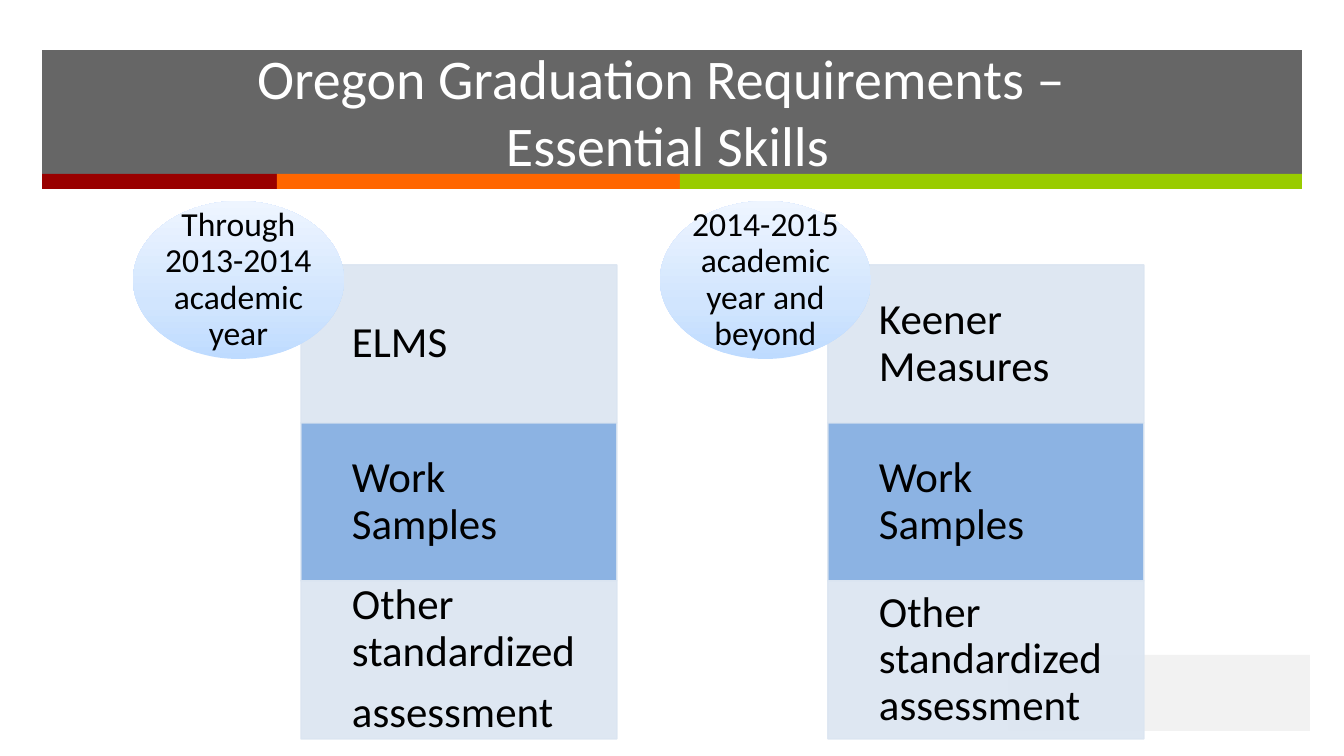
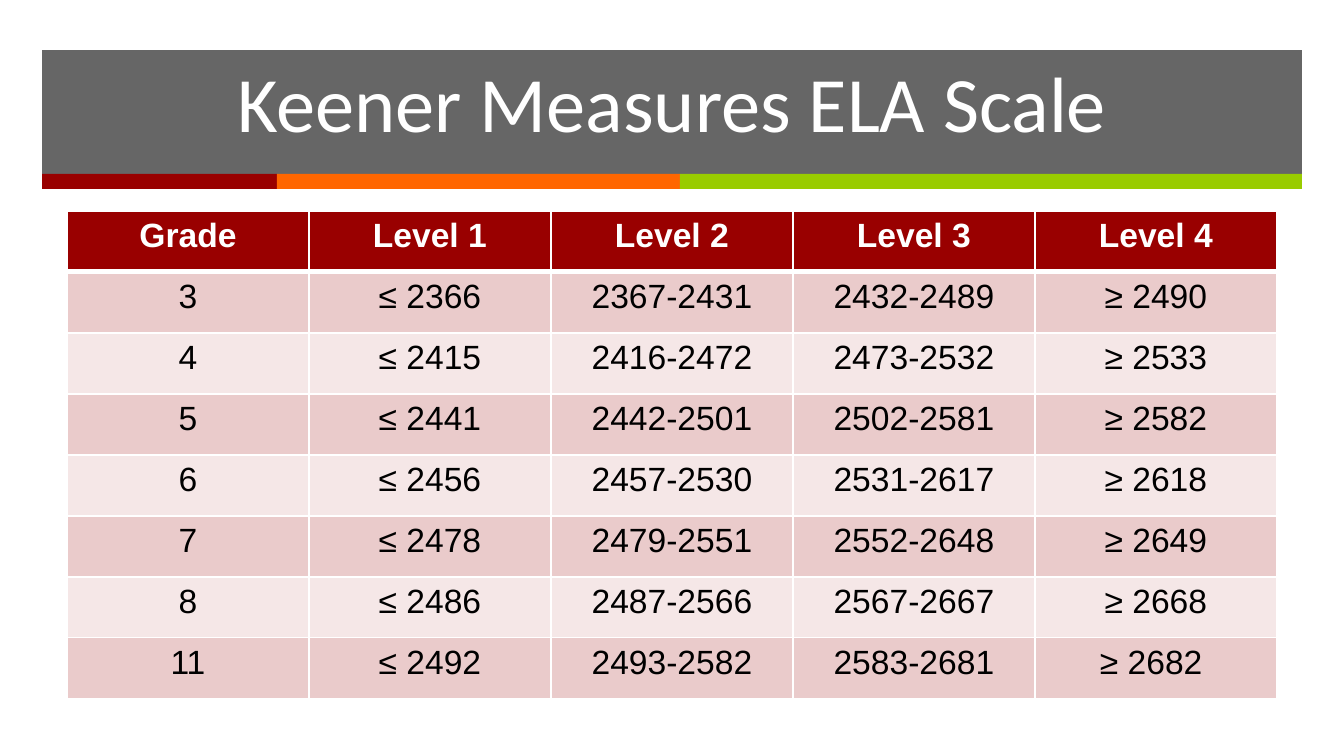
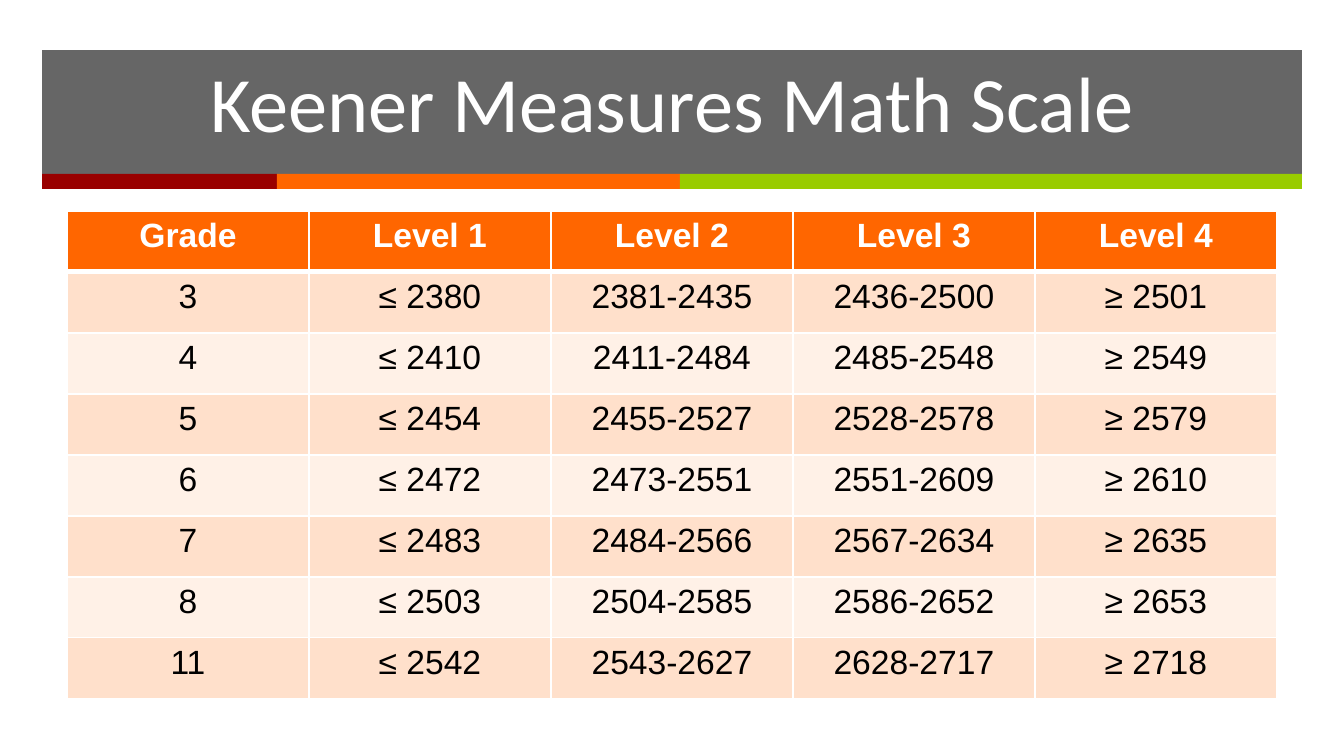
from lxml.etree import SubElement
from pptx import Presentation
from pptx.dml.color import RGBColor
from pptx.enum.shapes import MSO_SHAPE as Shape
from pptx.enum.text import MSO_ANCHOR as Anchor, MSO_AUTO_SIZE as AutoSize, PP_ALIGN as Align
from pptx.oxml.ns import qn
from pptx.util import Pt

EMU_PER_PX = 914400 / 134.4
TITLE_ONLY = 5

# Shared colours
WHITE, BLACK, GRAY = "FFFFFF", "000000", "262626"
RED, ORANGE, GREEN = "990000", "FF6600", "99CC00"
PALE_BLUE, MID_BLUE, FOOTER_GRAY = "DBE5F1", "8CB3E3", "F2F2F2"
OVAL_STOPS = [(0, "BEDBFF"), (35, "D1E5FE"), (100, "EEF5FF")]


def px(*lengths):
    return [round(length * EMU_PER_PX) for length in lengths]


def color(hex_string):
    return RGBColor.from_string(hex_string)


def set_alpha(parent, percent):
    for node in parent.iter(qn("a:srgbClr")):
        SubElement(node, qn("a:alpha"), val=str(percent * 1000))


def style_text(paragraph, size, hex_string, font="Calibri", bold=False, align=Align.CENTER):
    paragraph.alignment = align
    for run in paragraph.runs:
        run.font.name, run.font.size, run.font.bold = font, Pt(size), bold
        run.font.color.rgb = color(hex_string)


class Deck:
    """Holds the shared style and the current slide."""

    def __init__(self):
        self.presentation = Presentation()
        self.presentation.slide_width, self.presentation.slide_height = px(1344, 756)
        self.layout = self.presentation.slide_layouts[TITLE_ONLY]
        self.slide = None

    def add_slide(self, title, box=(67, 59, 1210, 84), size=42):
        is_first = self.slide is None
        self.slide = self.presentation.slides.add_slide(self.layout)
        if is_first:
            self.add_layout_bands()
        shape = self.slide.shapes.title
        shape.left, shape.top, shape.width, shape.height = px(*box)
        text_frame = shape.text_frame
        text_frame.text = title
        text_frame.auto_size = AutoSize.NONE
        text_frame.vertical_anchor = Anchor.MIDDLE
        style_text(text_frame.paragraphs[0], size, WHITE)

    def add_layout_bands(self):
        """Draw the title band and its stripes, then move them to the layout."""
        bands = [self.add_block((42, 50, 1260, 124), GRAY, alpha=70)]
        left = 42
        for width, fill in ((235, RED), (403, ORANGE), (622, GREEN)):
            bands.append(self.add_block((left, 174, width, 15), fill))
            left += width
        for position, band in enumerate(bands, start=2):
            self.layout.shapes.element.insert(position, band.element)

    def add_block(self, box, fill, alpha=None, line=None, line_alpha=89):
        shape = self.slide.shapes.add_shape(Shape.RECTANGLE, *px(*box))
        shape.shadow.inherit = False
        shape.fill.solid()
        shape.fill.fore_color.rgb = color(fill)
        if alpha:
            set_alpha(shape.element, alpha)
        if line:
            shape.line.color.rgb = color(line)
            shape.line.width = Pt(0.75)
            set_alpha(shape.element.spPr.find(qn("a:ln")), line_alpha)
        else:
            shape.line.fill.background()
        return shape

    def add_oval(self, box):
        shape = self.slide.shapes.add_shape(Shape.OVAL, *px(*box))
        shape.shadow.inherit = False
        shape.line.fill.background()
        shape.fill.gradient()
        shape.fill.gradient_angle = 90
        stops = shape.element.spPr.find(".//" + qn("a:gsLst"))
        stops.clear()
        for percent, hex_string in OVAL_STOPS:
            stop = SubElement(stops, qn("a:gs"), pos=str(percent * 1000))
            SubElement(stop, qn("a:srgbClr"), val=hex_string)

    def add_label(self, box, text, size, space_after, inset=0, align=Align.LEFT):
        text_frame = self.slide.shapes.add_textbox(*px(*box)).text_frame
        text_frame.word_wrap = True
        text_frame.vertical_anchor = Anchor.MIDDLE
        text_frame.margin_left = 0
        margin, = px(inset)
        text_frame.margin_top = text_frame.margin_right = text_frame.margin_bottom = margin
        text_frame.text = text
        for index, paragraph in enumerate(text_frame.paragraphs):
            style_text(paragraph, size, BLACK, align=align)
            paragraph.line_spacing = 0.9
            paragraph.space_before = Pt(space_after if index else 0)
            paragraph.space_after = Pt(0)
        text_frame.paragraphs[-1].space_after = Pt(space_after)

    def add_requirement_column(self, left, period, requirements):
        """Stack the requirements and overlap the first with a period oval."""
        height = 158
        for index, requirement in enumerate(requirements):
            top = 265 + index * height
            fill, alpha = (MID_BLUE, None) if index % 2 else (PALE_BLUE, 89)
            self.add_block((left + 168, top, 316, height), fill, alpha, PALE_BLUE)
            self.add_label((left + 219, top, 266, height), requirement, 23, 8.1, inset=24)
        self.add_oval((left, 201, 211, height))
        self.add_label((left + 31, 224, 149, 112), period, 18, 6.3, align=Align.CENTER)

    def add_scale_table(self, rows, header_fill, band_fills):
        header = ["Grade"] + [f"Level {level}" for level in range(1, 5)]
        rows = [header] + rows
        column_width, row_height = 242, 61
        box = px(67, 211, column_width * len(header), row_height * len(rows))
        table = self.slide.shapes.add_table(len(rows), len(header), *box).table
        for row_index, values in enumerate(rows):
            is_header = row_index == 0
            fill = header_fill if is_header else band_fills[(row_index - 1) % 2]
            for column_index, value in enumerate(values):
                cell = table.cell(row_index, column_index)
                cell.text = value
                cell.margin_left, cell.margin_right = px(13, 13)
                cell.margin_top, cell.margin_bottom = px(6, 6)
                style_text(cell.text_frame.paragraphs[0], 18,
                           WHITE if is_header else BLACK, "Arial", is_header)
                self.add_borders(cell, top=3 if row_index == 1 else 1,
                                 bottom=3 if is_header else 1)
                cell.fill.solid()
                cell.fill.fore_color.rgb = color(fill)

    def add_borders(self, cell, top, bottom):
        properties = cell._tc.get_or_add_tcPr()
        for side, width in (("L", 1), ("R", 1), ("T", top), ("B", bottom)):
            line = SubElement(properties, qn(f"a:ln{side}"), w=str(Pt(width)))
            SubElement(SubElement(line, qn("a:solidFill")), qn("a:srgbClr"), val=WHITE)


def main():
    deck = Deck()

    # Graduation requirements
    deck.add_slide("Oregon Graduation Requirements – \vEssential Skills",
                   box=(44, 58, 1247, 106), size=30)
    deck.add_block((1008, 655, 302, 76), FOOTER_GRAY)
    deck.add_requirement_column(
        133, "Through 2013-2014 academic year",
        ["ELMS", "Work Samples", "Other standardized\nassessment"])
    deck.add_requirement_column(
        660, "2014-2015 academic year and beyond",
        ["Keener Measures", "Work Samples", "Other standardized assessment"])

    # English language arts scale
    deck.add_slide("Keener Measures ELA Scale")
    deck.add_scale_table([
        ["3", "≤ 2366", "2367-2431", "2432-2489", "≥ 2490"],
        ["4", "≤ 2415", "2416-2472", "2473-2532", "≥ 2533"],
        ["5", "≤ 2441", "2442-2501", "2502-2581", "≥ 2582"],
        ["6", "≤ 2456", "2457-2530", "2531-2617", "≥ 2618"],
        ["7", "≤ 2478", "2479-2551", "2552-2648", "≥ 2649"],
        ["8", "≤ 2486", "2487-2566", "2567-2667", "≥ 2668"],
        ["11", "≤ 2492", "2493-2582", "2583-2681", "≥ 2682 "],
    ], RED, ("EACBCB", "F5E7E7"))

    # Math scale
    deck.add_slide("Keener Measures Math Scale")
    deck.add_scale_table([
        ["3", "≤ 2380", "2381-2435", "2436-2500", "≥ 2501"],
        ["4", "≤ 2410", "2411-2484", "2485-2548", "≥ 2549"],
        ["5", "≤ 2454", "2455-2527", "2528-2578", "≥ 2579"],
        ["6", "≤ 2472", "2473-2551", "2551-2609", "≥ 2610"],
        ["7", "≤ 2483", "2484-2566", "2567-2634", "≥ 2635"],
        ["8", "≤ 2503", "2504-2585", "2586-2652", "≥ 2653"],
        ["11", "≤ 2542", "2543-2627", "2628-2717", "≥ 2718"],
    ], ORANGE, ("FFE0CB", "FFF1E7"))

    deck.presentation.save("out.pptx")


if __name__ == "__main__":
    main()
